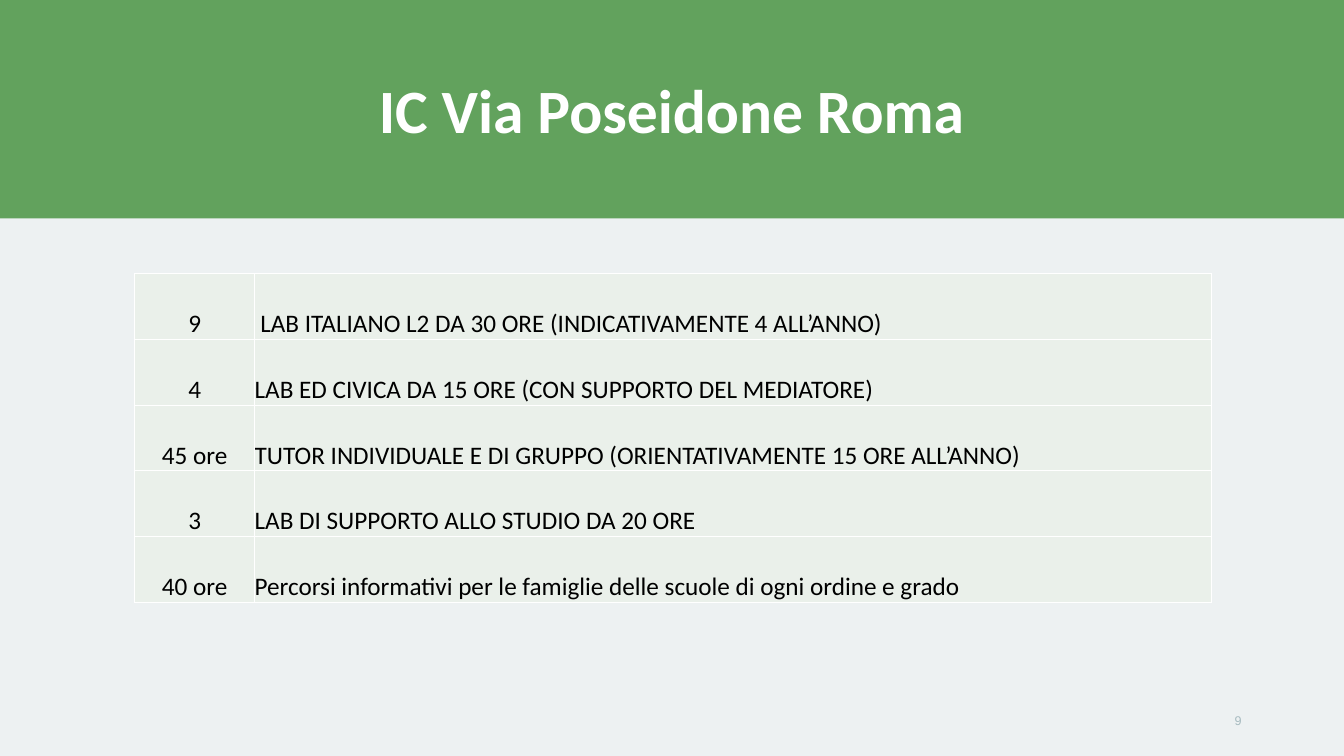
"""Build the slide listing the activities of IC Via Poseidone Roma."""
from lxml.etree import SubElement
from pptx import Presentation
from pptx.dml.color import RGBColor
from pptx.enum.shapes import MSO_SHAPE
from pptx.enum.text import MSO_ANCHOR, PP_ALIGN
from pptx.oxml.ns import qn
from pptx.util import Pt

BACKGROUND = RGBColor(0xED, 0xF1, 0xF2)
GREEN = RGBColor(0x62, 0xA2, 0x5D)
PALE_GREEN = RGBColor(0xEA, 0xF0, 0xEA)
WHITE = RGBColor(0xFF, 0xFF, 0xFF)
BLACK = RGBColor(0x00, 0x00, 0x00)
GREY = RGBColor(0xA7, 0xBB, 0xC0)

ACTIVITIES = [
    ("9", " LAB ITALIANO L2 DA 30 ORE (INDICATIVAMENTE 4 ALL’ANNO)"),
    ("4", "LAB ED CIVICA DA 15 ORE (CON SUPPORTO DEL MEDIATORE)"),
    ("45 ore", "TUTOR INDIVIDUALE E DI GRUPPO (ORIENTATIVAMENTE 15 ORE ALL’ANNO)"),
    ("3", "LAB DI SUPPORTO ALLO STUDIO DA 20 ORE"),
    ("40 ore", "Percorsi informativi per le famiglie delle scuole di ogni ordine e grado"),
]
COLUMN_WIDTHS = [85.7, 683.3]
COLUMN_ALIGNMENTS = [PP_ALIGN.CENTER, PP_ALIGN.LEFT]
ROW_HEIGHT = 46.94


def write(frame, text, size, font_name, color, alignment, bold=False):
    frame.text = text
    paragraph = frame.paragraphs[0]
    paragraph.alignment = alignment
    font = paragraph.runs[0].font
    font.size, font.name, font.bold = Pt(size), font_name, bold
    font.color.rgb = color
    return paragraph


def add_borders(cell, color, width):
    properties = cell._tc.get_or_add_tcPr()
    for position, side in enumerate(("a:lnL", "a:lnR", "a:lnT", "a:lnB")):
        line = SubElement(properties, qn(side), w=str(Pt(width)))
        fill = SubElement(line, qn("a:solidFill"))
        SubElement(fill, qn("a:srgbClr"), val=str(color))
        properties.insert(position, line)


presentation = Presentation()
presentation.slide_width, presentation.slide_height = Pt(960), Pt(540)
slide = presentation.slides.add_slide(presentation.slide_layouts[5])
slide.background.fill.solid()
slide.background.fill.fore_color.rgb = BACKGROUND

header_band = slide.shapes.add_shape(MSO_SHAPE.RECTANGLE, 0, 0, Pt(960), Pt(156))
header_band.shadow.inherit = False
header_band.fill.solid()
header_band.fill.fore_color.rgb = GREEN
header_band.line.fill.background()
slide.shapes._spTree.insert(2, header_band._element)

school = slide.shapes.title
school.left, school.top, school.width, school.height = Pt(66), Pt(28.75), Pt(828), Pt(104.4)
school.text_frame.vertical_anchor = MSO_ANCHOR.MIDDLE
school_line = write(school.text_frame, "IC Via Poseidone Roma", 44, "Calibri", WHITE,
                    PP_ALIGN.CENTER, bold=True)
school_line.line_spacing = 0.9

page_number = slide.shapes.add_textbox(Pt(678), Pt(500.5), Pt(216), Pt(28.75))
page_number.text_frame.word_wrap = True
page_number.text_frame.vertical_anchor = MSO_ANCHOR.MIDDLE
write(page_number.text_frame, "9", 9, "Arial", GREY, PP_ALIGN.RIGHT)

activities = slide.shapes.add_table(
    len(ACTIVITIES), len(COLUMN_WIDTHS), Pt(96.2), Pt(195.6),
    Pt(sum(COLUMN_WIDTHS)), Pt(ROW_HEIGHT * len(ACTIVITIES))).table
activities.first_row = False
activities.horz_banding = False
for column, width in zip(activities.columns, COLUMN_WIDTHS):
    column.width = Pt(width)
for row, activity in zip(activities.rows, ACTIVITIES):
    row.height = Pt(ROW_HEIGHT)
    for cell, text, alignment in zip(row.cells, activity, COLUMN_ALIGNMENTS):
        cell.margin_left = cell.margin_right = cell.margin_top = cell.margin_bottom = 0
        cell.vertical_anchor = MSO_ANCHOR.BOTTOM
        cell.fill.solid()
        cell.fill.fore_color.rgb = PALE_GREEN
        add_borders(cell, WHITE, 1)
        write(cell.text_frame, text, 18, "Calibri", BLACK, alignment)

presentation.save("out.pptx")
